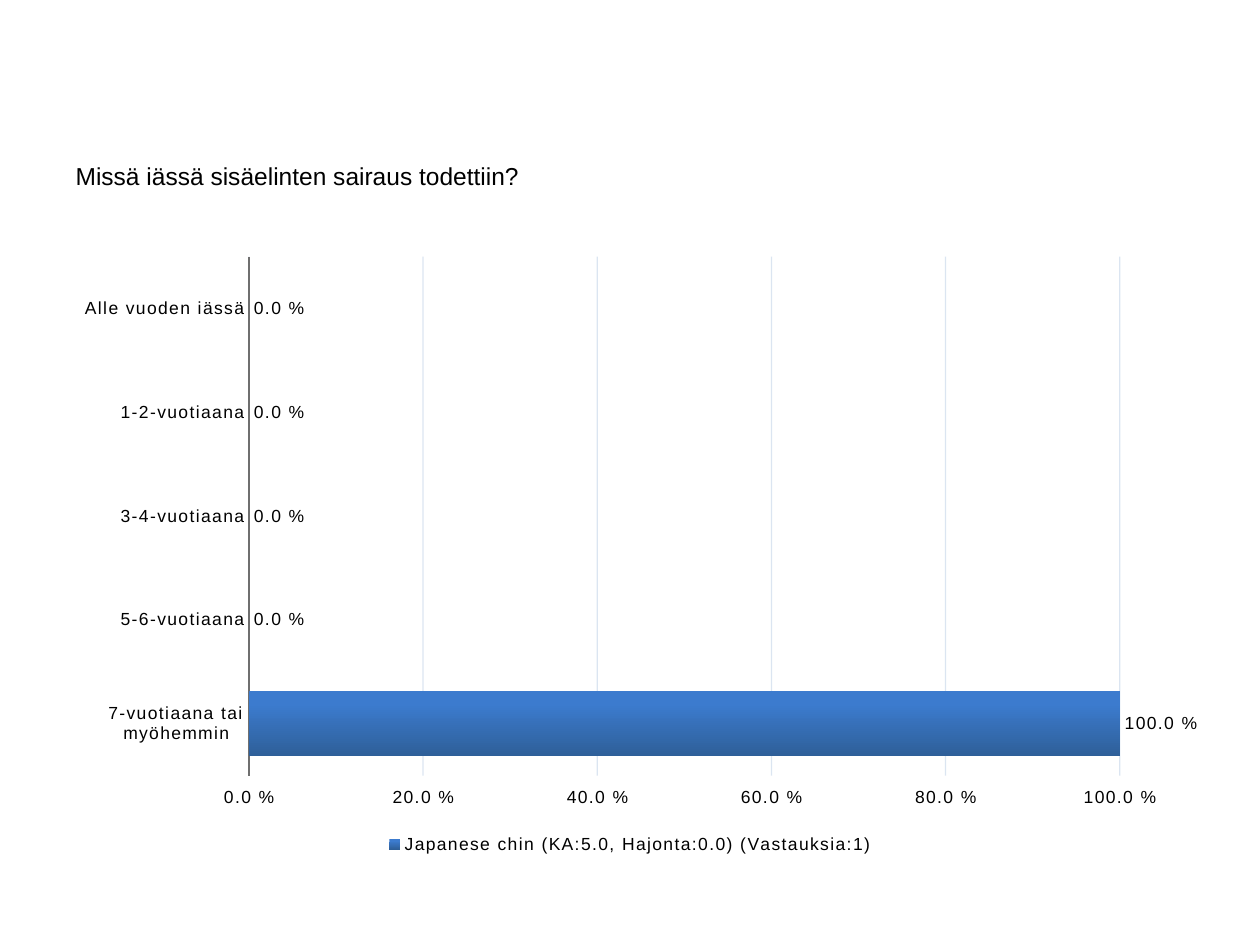
from pptx import Presentation
from pptx.chart.data import CategoryChartData
from pptx.dml.color import RGBColor
from pptx.enum.chart import (XL_CHART_TYPE, XL_LABEL_POSITION, XL_LEGEND_POSITION,
                             XL_TICK_LABEL_POSITION, XL_TICK_MARK)
from pptx.enum.text import MSO_ANCHOR
from pptx.oxml import parse_xml
from pptx.oxml.ns import nsdecls, qn
from pptx.util import Inches, Pt

BAR_CLUSTERED = XL_CHART_TYPE.BAR_CLUSTERED
OUTSIDE_END = XL_LABEL_POSITION.OUTSIDE_END
BOTTOM = XL_LEGEND_POSITION.BOTTOM
HIGH = XL_TICK_LABEL_POSITION.HIGH
NO_TICK = XL_TICK_MARK.NONE
TOP = MSO_ANCHOR.TOP

BLACK = RGBColor(0x00, 0x00, 0x00)
AXIS_GRAY = RGBColor(0x6F, 0x6F, 0x6F)
GRID_BLUE = RGBColor(0x4F, 0x81, 0xBD)
BAR_LIGHT = RGBColor(0x3C, 0x7B, 0xCE)
BAR_DARK = RGBColor(0x2E, 0x5F, 0x98)

FONT = "Arial"
LETTER_SPACING = "90"  # hundredths of a point
PERCENT = r"0.0\ %"
QUESTION = "Missä iässä sisäelinten sairaus todettiin?"
SERIES = "Japanese chin (KA:5.0, Hajonta:0.0) (Vastauksia:1)"
ANSWERS = {
    "Alle vuoden iässä": 0,
    "1-2-vuotiaana": 0,
    "3-4-vuotiaana": 0,
    "5-6-vuotiaana": 0,
    "7-vuotiaana tai myöhemmin": 1,
}


def style_font(font, size):
    font.name = FONT
    font.size = Pt(size)
    font.bold = False
    font.color.rgb = BLACK


def add_question(slide, box):
    sp = slide.placeholders[1]
    sp.left, sp.top, sp.width, sp.height = box
    tf = sp.text_frame
    tf.vertical_anchor = TOP
    p = tf.paragraphs[0]
    p.space_before = Pt(3)
    r = p.add_run()
    r.text = QUESTION
    style_font(r.font, 14)


def style_axes(chart):
    cat, val = chart.category_axis, chart.value_axis
    for axis in (cat, val):
        axis.major_tick_mark = axis.minor_tick_mark = NO_TICK
        style_font(axis.tick_labels.font, 10)
    cat.reverse_order = True
    cat.format.line.color.rgb = AXIS_GRAY
    cat.format.line.width = Pt(1)

    # The reversed category axis puts its high end at the bottom.
    val.tick_label_position = HIGH
    val.minimum_scale, val.maximum_scale, val.major_unit = 0, 1, 0.2
    val.tick_labels.number_format = PERCENT
    val.tick_labels.number_format_is_linked = False
    val.format.line.fill.background()
    grid = val.major_gridlines.format.line
    grid.width = Pt(0.75)
    grid.color.rgb = GRID_BLUE
    for clr in chart.element.iterfind(f".//{qn('c:majorGridlines')}//{qn('a:srgbClr')}"):
        clr.append(parse_xml(f'<a:alpha {nsdecls("a")} val="20000"/>'))


def style_bars(plot):
    plot.gap_width = 58
    plot.vary_by_categories = False
    fill = plot.series[0].format.fill
    fill.gradient()
    fill.gradient_angle = 270
    for stop, color, position in zip(fill.gradient_stops, (BAR_LIGHT, BAR_DARK), (0.2, 1)):
        stop.color.rgb = color
        stop.position = position

    plot.has_data_labels = True
    labels = plot.data_labels
    labels.show_value = True
    labels.position = OUTSIDE_END
    labels.number_format = PERCENT
    labels.number_format_is_linked = False
    style_font(labels.font, 10)


def set_plot_area(chart, x, y, w, h):
    """Fix the inner plot area, in fractions of the chart."""
    area = chart.element.find(f".//{qn('c:plotArea')}")
    old = area.find(qn("c:layout"))
    if old is not None:
        area.remove(old)
    parts = "".join(f'<c:{k} val="{v}"/>' for k, v in (
        ("layoutTarget", "inner"), ("xMode", "edge"), ("yMode", "edge"),
        ("x", x), ("y", y), ("w", w), ("h", h)))
    area.insert(0, parse_xml(
        f'<c:layout {nsdecls("c")}><c:manualLayout>{parts}</c:manualLayout></c:layout>'))


def add_age_chart(slide, box):
    data = CategoryChartData()
    data.categories = list(ANSWERS)
    data.add_series(SERIES, list(ANSWERS.values()))
    chart = slide.shapes.add_chart(BAR_CLUSTERED, *box, data).chart
    chart.has_title = False
    style_font(chart.font, 10)
    style_axes(chart)
    style_bars(chart.plots[0])
    chart.has_legend = True
    chart.legend.position = BOTTOM
    chart.legend.include_in_layout = False
    style_font(chart.legend.font, 10)
    set_plot_area(chart, 0.164, 0.02, 0.768, 0.844)
    for props in chart.element.iter(qn("a:defRPr")):
        props.set("spc", LETTER_SPACING)


def main():
    prs = Presentation()
    prs.slide_width, prs.slide_height = Inches(10), Inches(7.5)
    slide = prs.slides.add_slide(prs.slide_layouts.get_by_name("Section Header"))
    title = slide.shapes.title.element
    title.getparent().remove(title)
    left, width = Inches(0.5), Inches(9)
    add_question(slide, (left, Inches(1.23), width, Inches(0.59)))
    add_age_chart(slide, (left, Inches(1.94), width, Inches(4.88)))
    prs.save("out.pptx")


if __name__ == "__main__":
    main()
